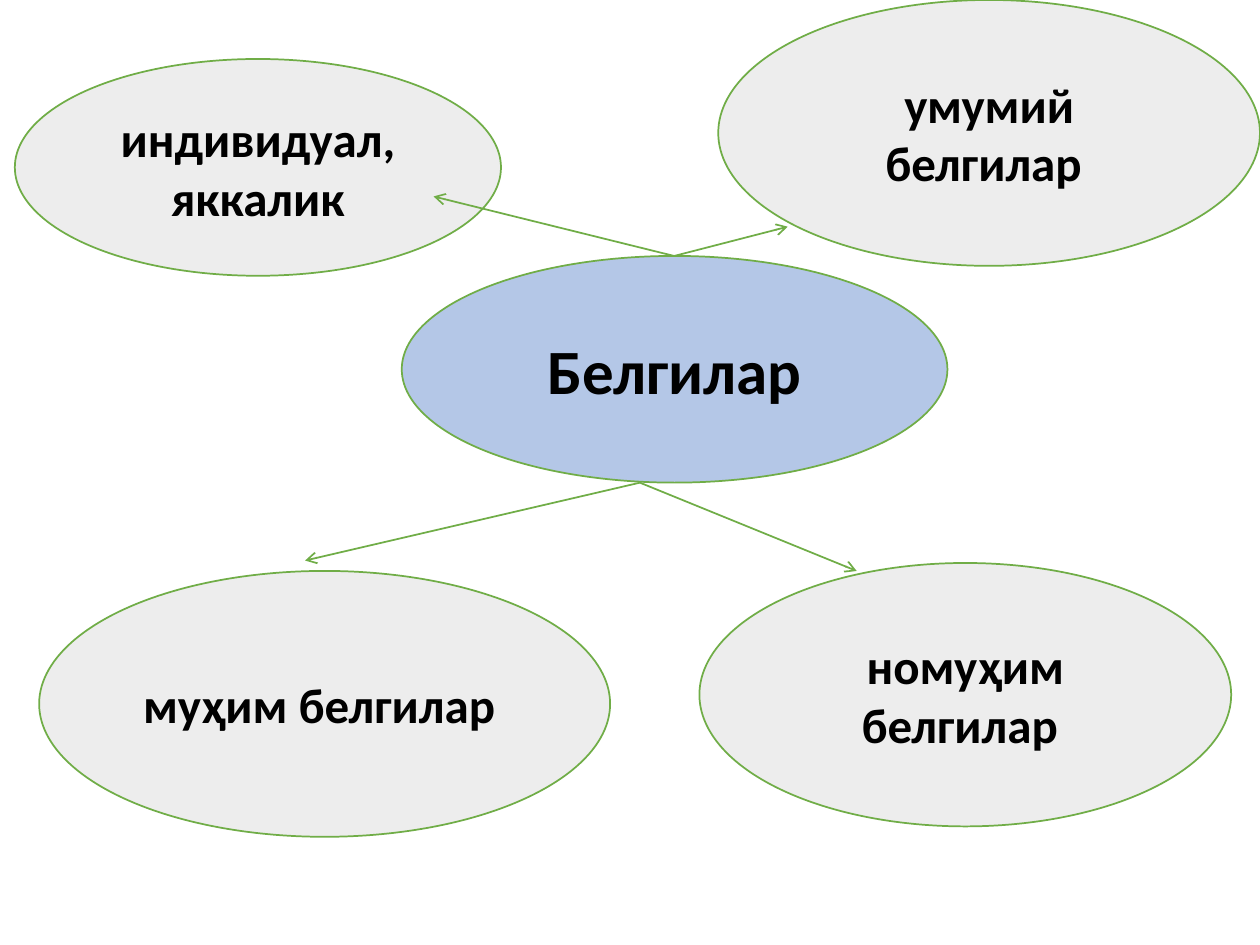
from lxml.etree import SubElement as Sub
from pptx import Presentation
from pptx.dml.color import RGBColor as Rgb
from pptx.enum.shapes import MSO_CONNECTOR as Link, MSO_SHAPE as Form
from pptx.enum.text import MSO_ANCHOR as Anchor, PP_ALIGN as Align
from pptx.oxml.ns import qn
from pptx.util import Cm, Pt

GREEN, GRAY, BLUE = "70AD47", "EDEDED", "B4C7E7"
HUB = (8.1, 5.16, 11, 4.57)
SIGNS = [
    ("индивидуал, яккалик", (0.3, 1.19, 9.8, 4.37)),
    ("муҳим белгилар ", (0.79, 11.51, 11.51, 5.36)),
    ("умумий белгилар ", (14.48, 0, 10.92, 5.36)),
    ("номуҳим белгилар ", (14.1, 11.35, 10.72, 5.31)),
]
RAYS = [
    ((13.59, 5.16), [(15.88, 4.57), (8.74, 3.96)]),
    ((12.9, 9.73), [(17.27, 11.51), (6.15, 11.3)]),
]


def color(code):
    return Rgb.from_string(code)


def edge(item):
    item.line.color.rgb = color(GREEN)
    item.line.width = Pt(1)


def write(frame, text, size=28, bold=True, ink="000000", face="Calibri"):
    frame.word_wrap = True
    frame.vertical_anchor = Anchor.MIDDLE
    para = frame.paragraphs[0]
    para.alignment = Align.CENTER
    run = para.add_run()
    run.text = text
    font = run.font
    font.name, font.size, font.bold = face, Pt(size), bold
    font.color.rgb = color(ink)


def oval(slide, text, box, fill=GRAY, **style):
    shape = slide.shapes.add_shape(Form.OVAL, *map(Cm, box))
    shape.shadow.inherit = False
    shape.fill.solid()
    shape.fill.fore_color.rgb = color(fill)
    edge(shape)
    write(shape.text_frame, text, **style)


def arrow(slide, start, end):
    line = slide.shapes.add_connector(Link.STRAIGHT, *map(Cm, start + end))
    edge(line)
    Sub(line.line._get_or_add_ln(), qn("a:tailEnd"), type="arrow")
    Sub(line._element.spPr, qn("a:effectLst"))


def main():
    deck = Presentation()
    deck.slide_width, deck.slide_height = Cm(25.4), Cm(19.05)
    slide = deck.slides.add_slide(deck.slide_layouts[6])
    oval(slide, "Белгилар", HUB, fill=BLUE, size=36)
    for text, box in SIGNS:
        oval(slide, text, box)
    for start, ends in RAYS:
        for end in ends:
            arrow(slide, start, end)
    deck.save("out.pptx")


if __name__ == "__main__":
    main()
